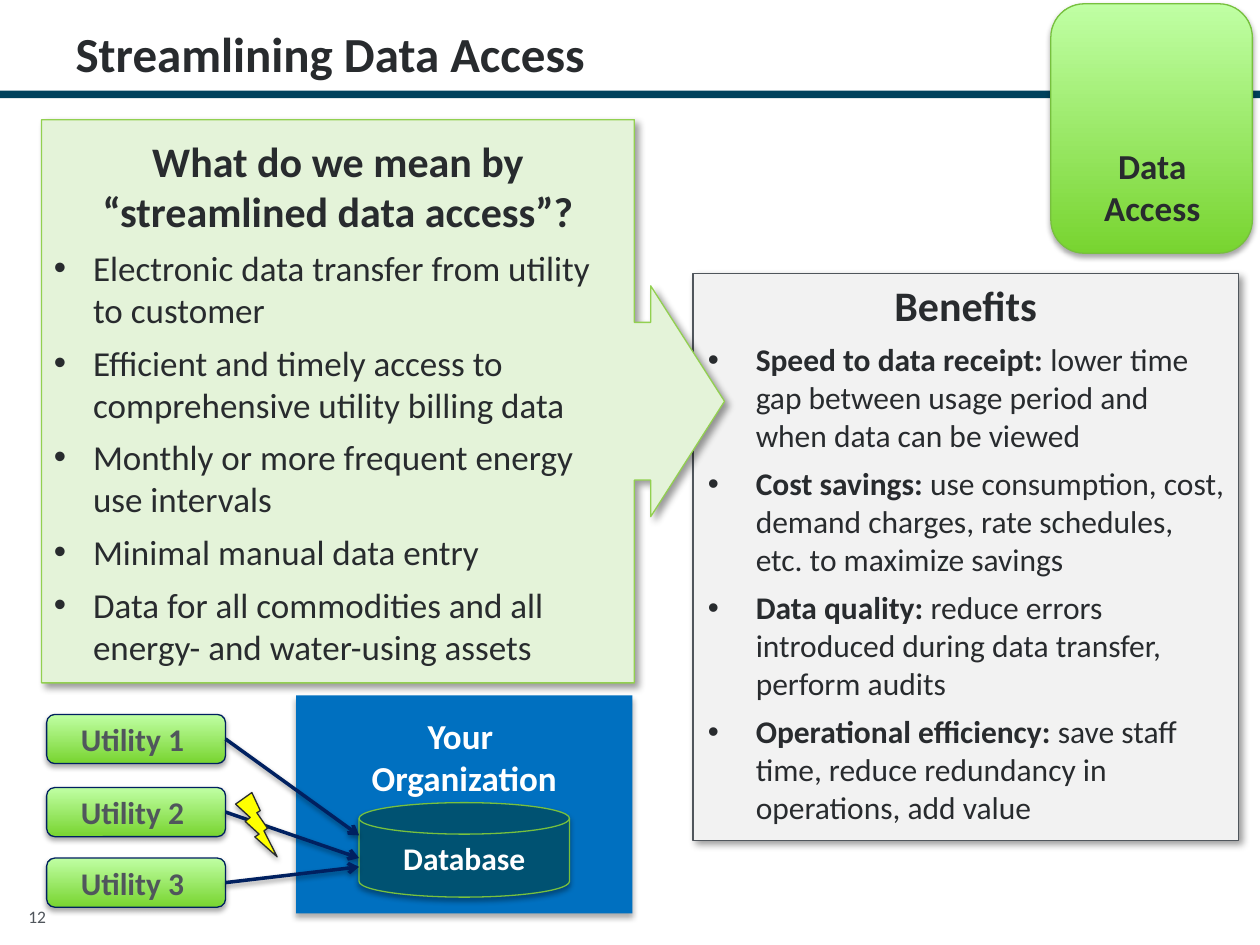
from lxml.etree import SubElement
from pptx import Presentation
from pptx.dml.color import RGBColor
from pptx.enum.shapes import MSO_CONNECTOR, MSO_SHAPE
from pptx.enum.text import MSO_ANCHOR, MSO_AUTO_SIZE, PP_ALIGN
from pptx.oxml.ns import qn
from pptx.util import Inches, Pt

FONT = "Calibri"
INK = RGBColor(0x28, 0x2B, 0x2E)
GREY = RGBColor(0x50, 0x56, 0x5C)
WHITE = RGBColor(0xFF, 0xFF, 0xFF)
PANEL = RGBColor(0xF2, 0xF2, 0xF2)
MINT = RGBColor(0xE4, 0xF3, 0xD9)
LIME = RGBColor(0x92, 0xD0, 0x50)
GREEN = RGBColor(0x77, 0xC0, 0x3E)
GREEN_LOW = RGBColor(0x78, 0xD4, 0x30)
GREEN_HIGH = RGBColor(0xC0, 0xFF, 0xA4)
BAR = RGBColor(0x00, 0x42, 0x5D)
TEAL = RGBColor(0x00, 0x52, 0x72)
BLUE = RGBColor(0x00, 0x70, 0xC0)
NAVY = RGBColor(0x00, 0x20, 0x60)
YELLOW = RGBColor(0xFF, 0xFF, 0x00)

# Shadows: opacity %, blur pt, distance pt, direction in degrees
SIDE_SHADOW = (40, 4, 3, 45)
SOFT_SHADOW = (35, 3.1, 1.8, 90)
BOX_SHADOW = (32, 3.5, 2.2, 90)
LINE_SHADOW = (38, 3.1, 1.6, 90)

MEANINGS = [
    "Electronic data transfer from utility to customer",
    "Efficient and timely access to comprehensive utility billing data",
    "Monthly or more frequent energy use intervals",
    "Minimal manual data entry",
    "Data for all commodities and all energy- and water-using assets",
]
BENEFITS = [
    ("Speed to data receipt: ",
     "lower time gap between usage period and when data can be viewed"),
    ("Cost savings: ",
     "use consumption, cost, demand charges, rate schedules, etc. to maximize savings"),
    ("Data quality: ",
     "reduce errors introduced during data transfer, perform audits"),
    ("Operational efficiency: ",
     "save staff time, reduce redundancy in operations, add value"),
]
# Name, top of the box, height at which its arrow meets the database
UTILITIES = [("Utility 1 ", 5.67, 6.63), ("Utility 2 ", 6.25, 6.81),
             ("Utility 3 ", 6.81, 6.88)]


def add_text(tf, text, lead="", size=18, color=INK, bold=False,
             align=PP_ALIGN.CENTER, before=0, hanging=None):
    """Add a paragraph; lead is a bold opening, hanging is (margin, indent)."""
    p = tf.paragraphs[0]
    if p.runs:
        p = tf.add_paragraph()
    p.alignment = align
    p.space_before = Pt(before)
    if hanging:
        pPr = p._p.get_or_add_pPr()
        pPr.set("marL", str(Inches(hanging[0])))
        pPr.set("indent", str(-Inches(hanging[1])))
        SubElement(pPr, qn("a:buFont"), typeface="Arial")
        SubElement(pPr, qn("a:buChar"), char="•")
    for words, weight in ((lead, True), (text, bold)):
        if words:
            r = p.add_run()
            r.text = words
            r.font.name = FONT
            r.font.size = Pt(size)
            r.font.bold = weight
            r.font.color.rgb = color
    return p


def add_bullet(tf, text, hanging, **style):
    return add_text(tf, text, align=PP_ALIGN.LEFT, before=6, hanging=hanging, **style)


def set_shadow(spPr, shadow):
    effects = SubElement(spPr, qn("a:effectLst"))
    if shadow:
        opacity, blur, dist, angle = shadow
        outer = SubElement(effects, qn("a:outerShdw"), blurRad=str(Pt(blur)),
                           dist=str(Pt(dist)), dir=str(angle * 60000),
                           algn="ctr", rotWithShape="0")
        clr = SubElement(outer, qn("a:srgbClr"), val="000000")
        SubElement(clr, qn("a:alpha"), val=str(opacity * 1000))


class SlideBuilder:
    def __init__(self, prs):
        self.s = prs.slides.add_slide(prs.slide_layouts[5])

    def title(self, text, x, y, w, h):
        sp = self.s.shapes.title
        sp.left, sp.top, sp.width, sp.height = map(Inches, (x, y, w, h))
        tf = sp.text_frame
        tf.auto_size = MSO_AUTO_SIZE.NONE
        tf.vertical_anchor = MSO_ANCHOR.MIDDLE
        p = add_text(tf, text, size=28, bold=True, align=PP_ALIGN.LEFT)
        p.line_spacing = Pt(28)

    def shape(self, kind, x, y, w, h, fill=None, line=None, shadow=None,
              anchor=MSO_ANCHOR.MIDDLE):
        """Add a preset shape; without a fill colour it gets the green gradient."""
        sp = self.s.shapes.add_shape(kind, *map(Inches, (x, y, w, h)))
        if fill is None:
            sp.fill.gradient()
            sp.fill.gradient_angle = 90
            for stop, color in zip(sp.fill.gradient_stops, (GREEN_LOW, GREEN_HIGH)):
                stop.color.rgb = color
        else:
            sp.fill.solid()
            sp.fill.fore_color.rgb = fill
        if line is None:
            sp.line.fill.background()
        else:
            sp.line.color.rgb = line
            sp.line.width = Pt(0.75)
        set_shadow(sp._element.spPr, shadow)
        sp.text_frame.word_wrap = True
        sp.text_frame.vertical_anchor = anchor
        return sp

    def textbox(self, x, y, w, h, wrap=True):
        tf = self.s.shapes.add_textbox(*map(Inches, (x, y, w, h))).text_frame
        tf.word_wrap = wrap
        return tf

    def arrow(self, start, x, y):
        """Draw an arrow from the right side of a shape to a point."""
        c = self.s.shapes.add_connector(MSO_CONNECTOR.STRAIGHT, 0, 0, Inches(x), Inches(y))
        c.begin_connect(start, 3)
        c.line.color.rgb = NAVY
        c.line.width = Pt(2)
        SubElement(c.line._get_or_add_ln(), qn("a:tailEnd"), type="arrow")
        set_shadow(c._element.spPr, LINE_SHADOW)


def main():
    prs = Presentation()
    prs.slide_width, prs.slide_height = Inches(10), Inches(7.5)
    b = SlideBuilder(prs)

    # Header and page number
    b.shape(MSO_SHAPE.RECTANGLE, 0, 0.72, 10, 0.06, fill=BAR)
    b.title("Streamlining Data Access", 0.5, 0, 9, 0.92)
    add_text(b.textbox(0.05, 7.14, 0.49, 0.26), "12", size=10, color=GREY)

    # Benefits panel
    sp = b.shape(MSO_SHAPE.RECTANGLE, 5.5, 2.17, 4.33, 4.5, fill=PANEL, line=GREY,
                 shadow=SIDE_SHADOW, anchor=MSO_ANCHOR.TOP)
    add_text(sp.text_frame, "Benefits", size=24, bold=True)
    for lead, text in BENEFITS:
        add_bullet(sp.text_frame, text, (0.4, 0.38), lead=lead)

    # Definition callout
    sp = b.shape(MSO_SHAPE.RIGHT_ARROW_CALLOUT, 0.33, 0.95, 5.42, 4.47, fill=MINT,
                 line=LIME, shadow=SIDE_SHADOW)
    for i, value in enumerate((0.28, 0.205, 0.131, 0.868)):
        sp.adjustments[i] = value
    add_text(sp.text_frame, "What do we mean by “streamlined data access”?",
             size=24, bold=True)
    for text in MEANINGS:
        add_bullet(sp.text_frame, text, (0.31, 0.31), size=20)

    # Topic badge
    b.shape(MSO_SHAPE.ROUNDED_RECTANGLE, 8.34, 0.03, 1.6, 1.98, line=GREEN,
            shadow=SOFT_SHADOW)
    tf = b.textbox(8.66, 1.1, 0.97, 0.77, wrap=False)
    for word in ("Data", "Access"):
        add_text(tf, word, size=20, bold=True)

    # Organization and its database
    sp = b.shape(MSO_SHAPE.RECTANGLE, 2.35, 5.52, 2.67, 1.73, fill=BLUE,
                 shadow=BOX_SHADOW, anchor=MSO_ANCHOR.TOP)
    sp.text_frame.margin_top = Inches(0.15)
    for word in ("Your ", "Organization"):
        add_text(sp.text_frame, word, size=20, color=WHITE, bold=True)
    sp = b.shape(MSO_SHAPE.FLOWCHART_MAGNETIC_DISK, 2.85, 6.37, 1.67, 0.75, fill=TEAL,
                 line=GREEN, shadow=SOFT_SHADOW)
    add_text(sp.text_frame, "Database", color=WHITE, bold=True)

    # Utilities feeding the database
    for name, top, end in UTILITIES:
        sp = b.shape(MSO_SHAPE.ROUNDED_RECTANGLE, 0.37, top, 1.42, 0.39, line=NAVY,
                     shadow=SOFT_SHADOW)
        add_text(sp.text_frame, name, color=GREY, bold=True)
        b.arrow(sp, 2.85, end)
    b.shape(MSO_SHAPE.LIGHTNING_BOLT, 1.87, 6.29, 0.33, 0.51, fill=YELLOW, line=INK,
            shadow=SOFT_SHADOW)

    prs.save("out.pptx")


if __name__ == "__main__":
    main()
